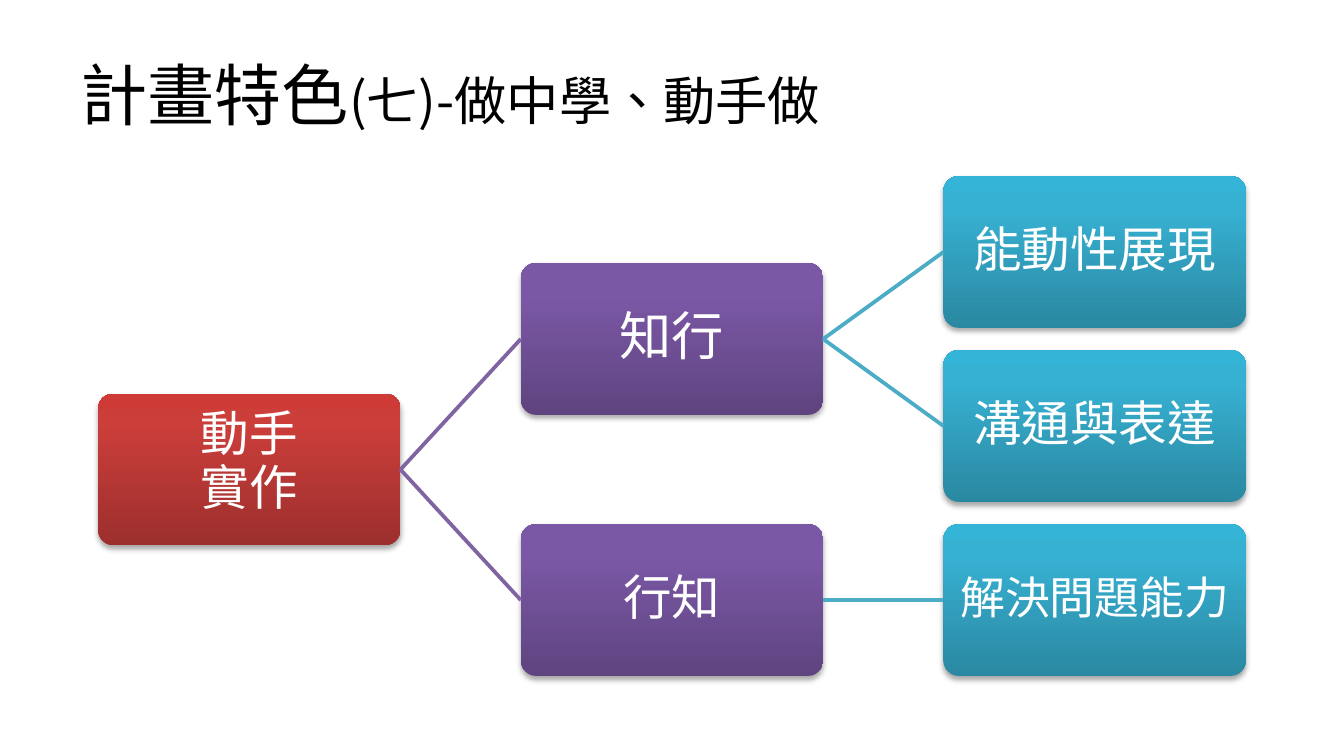
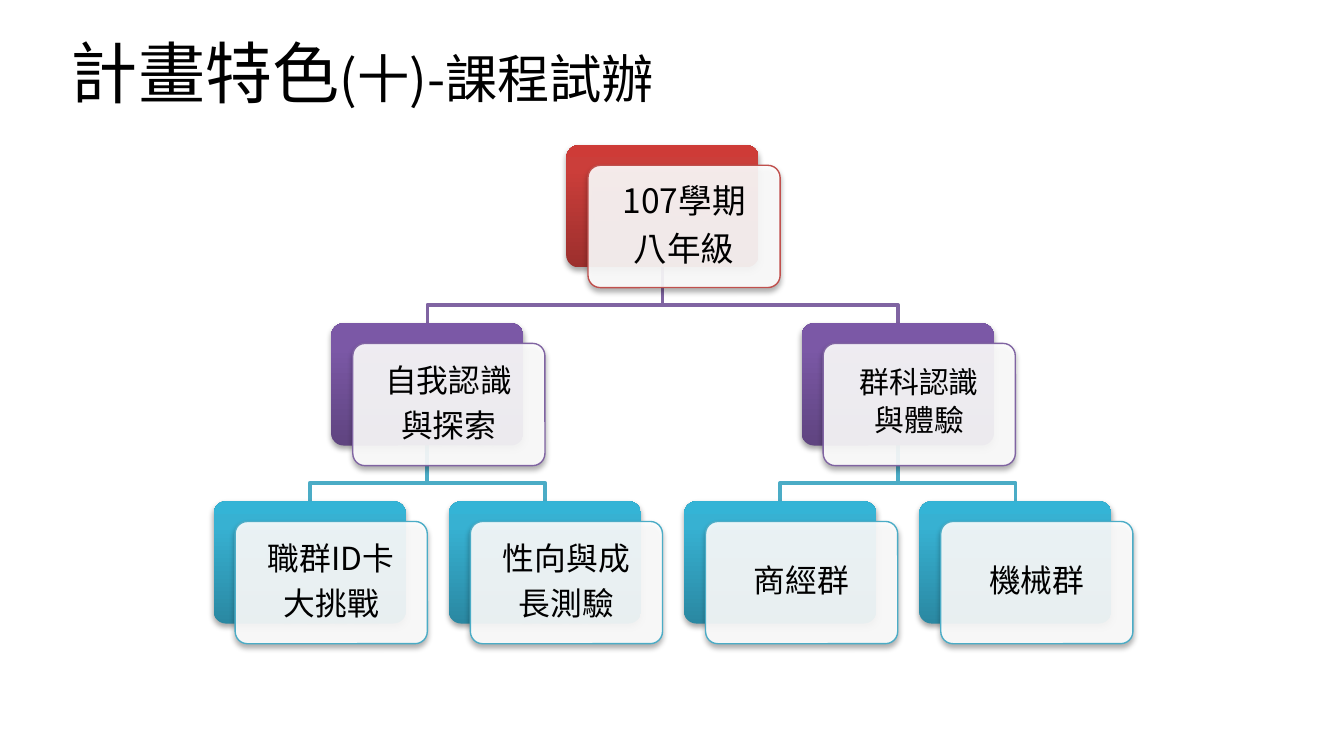
import copy
from dataclasses import dataclass, field

import lxml.etree
import pptx
import pptx.dml.color
import pptx.enum.shapes
import pptx.enum.text
import pptx.oxml.ns
import pptx.util

Inches = pptx.util.Inches
Pt = pptx.util.Pt
qn = pptx.oxml.ns.qn
RGB = pptx.dml.color.RGBColor.from_string


@dataclass(frozen=True)
class Level:
    """Accent colour and bottom-to-top gradient of one tree level."""
    accent: str
    gradient: tuple


@dataclass(frozen=True)
class Theme:
    """Colours, fonts and sizes shared by the slides."""
    font: str = "Noto Sans CJK SC"
    language: str = "zh-TW"
    ink: str = "000000"
    paper: str = "FFFFFF"
    title_size: int = 36
    subtitle_size: int = 28
    card_opacity: int = 90
    shadow_opacity: int = 35
    corner: float = 0.1
    link_width: int = 2
    card_line: float = 0.75
    line_spacing: float = 0.9
    space_after: float = 0.35
    gradient_positions: tuple = (0, 0.8, 1)
    levels: tuple = (
        Level("C0504D", ("9C2F2D", "CB3E3A", "CE3B37")),
        Level("8064A2", ("5F4480", "7B58A6", "7C57A8")),
        Level("4BACC6", ("2A88A2", "37B1D2", "34B4D6")),
    )


THEME = Theme()


@dataclass
class Topic:
    """A tree node; rank is its place across the tree, counted in leaves."""
    lines: list
    size: int
    children: list = field(default_factory=list)
    exact_spacing: int = 0
    rank: float = 0
    depth: int = 0


@dataclass(frozen=True)
class Box:
    """A rectangle in inches."""
    left: float
    top: float
    width: float
    height: float

    def lengths(self):
        """Return the four measures as lengths."""
        return [Inches(v) for v in (self.left, self.top, self.width, self.height)]

    def shifted(self, dx, dy):
        """Return the same box moved by dx and dy."""
        return Box(self.left + dx, self.top + dy, self.width, self.height)


def rank_topics(topic, depth=0, first=0):
    """Place leaves in order and parents midway; return the next free rank."""
    topic.depth, topic.rank = depth, first
    if not topic.children:
        return first + 1
    for child in topic.children:
        first = rank_topics(child, depth + 1, first)
    topic.rank = sum(child.rank for child in topic.children) / len(topic.children)
    return first


def walk(topic):
    """Yield a topic and all topics below it."""
    yield topic
    for child in topic.children:
        yield from walk(child)


def style_font(paragraph, color, size=None):
    """Set the theme font, language, colour and size of a paragraph."""
    font = paragraph.font
    font.name = THEME.font
    font.color.rgb = RGB(color)
    if size:
        font.size = Pt(size)
    font._element.set("lang", THEME.language)
    east_asian = lxml.etree.SubElement(font._element, qn("a:ea"))
    east_asian.set("typeface", THEME.font)


def set_opacity(color_element, percent):
    """Add an alpha value to a colour element."""
    lxml.etree.SubElement(color_element, qn("a:alpha")).set("val", str(percent * 1000))


def add_panel(slide, box):
    """Add a rounded rectangle with the soft drop shadow."""
    panel = slide.shapes.add_shape(
        pptx.enum.shapes.MSO_SHAPE.ROUNDED_RECTANGLE, *box.lengths())
    panel.adjustments[0] = THEME.corner
    panel.line.fill.background()
    panel.shadow.inherit = False
    effects = panel._element.spPr.find(qn("a:effectLst"))
    shadow = lxml.etree.SubElement(
        effects, qn("a:outerShdw"), blurRad=str(Pt(3.1)), dist=str(Pt(1.8)),
        dir="5400000", rotWithShape="0")
    tint = lxml.etree.SubElement(shadow, qn("a:srgbClr"), val=THEME.ink)
    set_opacity(tint, THEME.shadow_opacity)
    return panel


def add_gradient_panel(slide, box, level):
    """Add a panel filled with the gradient of its level."""
    panel = add_panel(slide, box)
    panel.fill.gradient()
    panel.fill.gradient_angle = 90
    stop_list = panel._element.spPr.find(".//" + qn("a:gsLst"))
    stop_list.append(copy.deepcopy(stop_list[0]))
    stops = zip(panel.fill.gradient_stops, THEME.gradient_positions, level.gradient)
    for stop, position, color in stops:
        stop.position = position
        stop.color.rgb = RGB(color)
    return panel


def add_card(slide, box, level):
    """Add a translucent card outlined in the accent of its level."""
    card = add_panel(slide, box)
    card.fill.solid()
    card.fill.fore_color.rgb = RGB(THEME.paper)
    set_opacity(card._element.spPr.find(".//" + qn("a:srgbClr")), THEME.card_opacity)
    card.line.color.rgb = RGB(level.accent)
    card.line.width = Pt(THEME.card_line)
    return card


def write_topic(panel, topic, color, inset):
    """Write the lines of a topic centred in its panel."""
    frame = panel.text_frame
    frame.word_wrap = True
    frame.vertical_anchor = pptx.enum.text.MSO_ANCHOR.MIDDLE
    frame.margin_left = frame.margin_right = Inches(inset)
    frame.margin_top = frame.margin_bottom = Inches(inset)
    for index, line in enumerate(topic.lines):
        paragraph = frame.add_paragraph() if index else frame.paragraphs[0]
        paragraph.text = line
        paragraph.alignment = pptx.enum.text.PP_ALIGN.CENTER
        paragraph.space_after = Pt(topic.size * THEME.space_after)
        exact = topic.exact_spacing
        paragraph.line_spacing = Pt(exact) if exact else THEME.line_spacing
        style_font(paragraph, color, topic.size)


def style_link(link, level):
    """Draw a link in the accent of the level it leads to."""
    link.line.color.rgb = RGB(level.accent)
    link.line.width = Pt(THEME.link_width)


def add_title(slide, box, number, subject):
    """Add the slide title with its smaller second part."""
    frame = slide.shapes.add_textbox(*box.lengths()).text_frame
    frame.word_wrap = True
    frame.vertical_anchor = pptx.enum.text.MSO_ANCHOR.MIDDLE
    paragraph = frame.paragraphs[0]
    style_font(paragraph, THEME.ink)
    parts = (("計畫特色", THEME.title_size),
             (f"({number})-{subject}", THEME.subtitle_size))
    for text, size in parts:
        run = paragraph.add_run()
        run.text = text
        run.font.size = Pt(size)


def add_sideways_tree(slide, box, root):
    """Draw a tree growing to the right, joined by straight lines."""
    width, height = 2.25, 1.13
    leaves = rank_topics(root)
    column_step = (box.width - width) / (len(THEME.levels) - 1)
    row_step = (box.height - height) / (leaves - 1)
    panels = {}
    for topic in walk(root):
        place = Box(box.left + topic.depth * column_step,
                    box.top + topic.rank * row_step, width, height)
        panel = add_gradient_panel(slide, place, THEME.levels[topic.depth])
        write_topic(panel, topic, THEME.paper, 0.02)
        panels[id(topic)] = panel
    for parent in walk(root):
        for child in parent.children:
            link = slide.shapes.add_connector(
                pptx.enum.shapes.MSO_CONNECTOR.STRAIGHT, 0, 0, 0, 0)
            link.begin_connect(panels[id(parent)], 3)
            link.end_connect(panels[id(child)], 1)
            style_link(link, THEME.levels[child.depth])
            lxml.etree.SubElement(link._element.spPr, qn("a:effectLst"))


def add_elbow(slide, parent, child, level):
    """Draw a bent link from the bottom of a parent to the top of a child."""
    start_x = parent.left + parent.width / 2
    end_x = child.left + child.width / 2
    start_y = parent.top + parent.height
    bend_y = start_y + (child.top - start_y) * 0.67
    points = [(start_x, bend_y), (end_x, bend_y), (end_x, child.top)]
    builder = slide.shapes.build_freeform(Inches(start_x), Inches(start_y))
    builder.add_line_segments([(Inches(x), Inches(y)) for x, y in points], close=False)
    elbow = builder.convert_to_shape()
    elbow.fill.background()
    elbow.shadow.inherit = False
    style_link(elbow, level)


def add_downward_tree(slide, box, root):
    """Draw a tree growing downwards, each topic on a card over a panel."""
    width, height = 1.43, 0.91
    card_dx, card_dy = 0.16, 0.15
    leaves = rank_topics(root)
    column_step = (box.width - width - card_dx) / (leaves - 1)
    row_step = (box.height - height - card_dy) / (len(THEME.levels) - 1)
    places = {
        id(topic): Box(box.left + topic.rank * column_step,
                       box.top + topic.depth * row_step, width, height)
        for topic in walk(root)}
    for parent in walk(root):
        for child in parent.children:
            add_elbow(slide, places[id(parent)], places[id(child)],
                      THEME.levels[child.depth])
    for topic in walk(root):
        place, level = places[id(topic)], THEME.levels[topic.depth]
        add_gradient_panel(slide, place, level)
        card = add_card(slide, place.shifted(card_dx, card_dy), level)
        write_topic(card, topic, THEME.ink, 0.07)


def main():
    """Build both slides and save the deck."""
    deck = pptx.Presentation()
    deck.slide_width = Inches(10)
    deck.slide_height = Inches(10) * 9 // 16
    blank = deck.slide_layouts[6]

    practice = Topic(["動手", "實作"], 26, [
        Topic(["知行"], 28, [
            Topic(["能動性展現"], 26),
            Topic(["溝通與表達"], 26)]),
        Topic(["行知"], 26, [
            Topic(["解決問題能力"], 24)]),
    ], exact_spacing=20)
    slide = deck.slides.add_slide(blank)
    add_title(slide, Box(0.5, 0.23, 9, 0.94), "七", "做中學、動手做")
    add_sideways_tree(slide, Box(0.73, 1.31, 8.54, 3.72), practice)

    trial = Topic(["107學期", "八年級"], 18, [
        Topic(["自我認識", "與探索"], 17, [
            Topic(["職群ID卡", "大挑戰"], 17),
            Topic(["性向與成", "長測驗"], 17)]),
        Topic(["群科認識", "與體驗"], 16, [
            Topic(["商經群"], 17),
            Topic(["機械群"], 17)], exact_spacing=15),
    ])
    slide = deck.slides.add_slide(blank)
    add_title(slide, Box(0.43, 0.06, 9, 0.94), "十", "課程試辦")
    add_downward_tree(slide, Box(1.59, 1.08, 6.84, 3.71), trial)

    deck.save("out.pptx")


if __name__ == "__main__":
    main()
